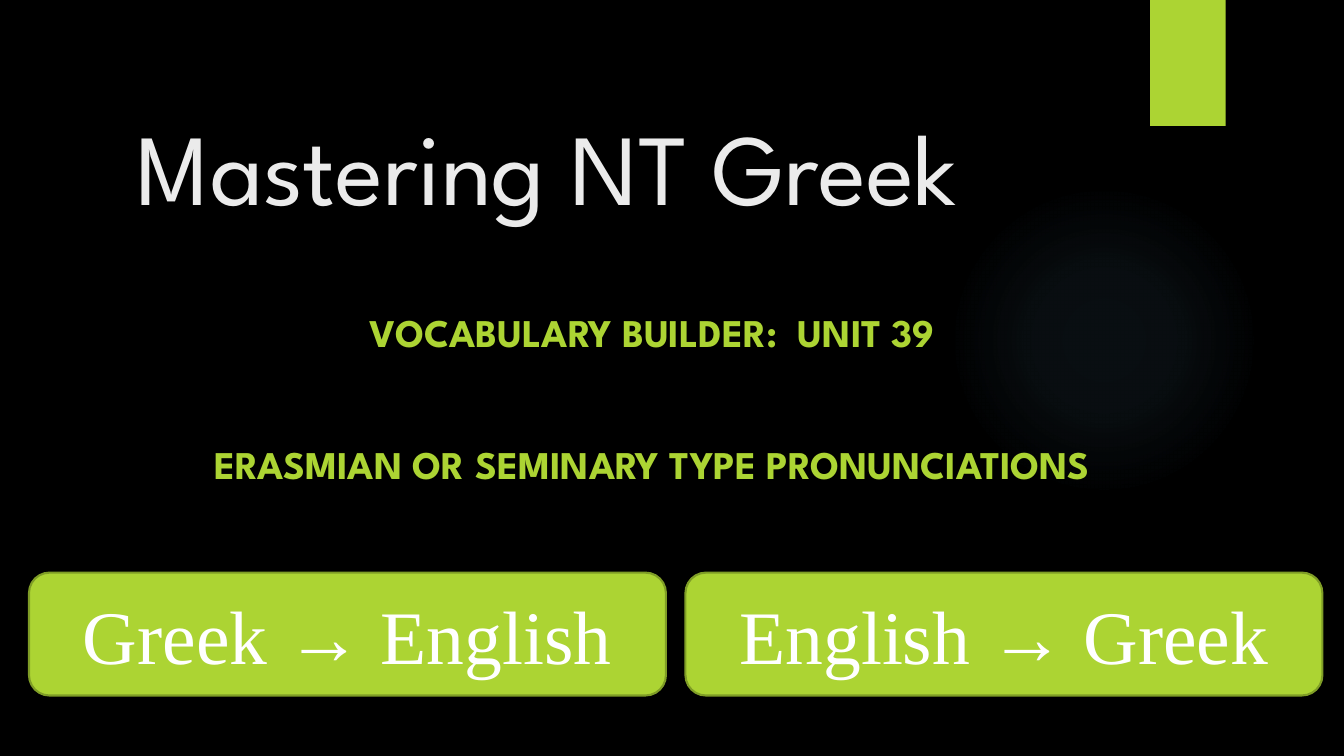
"""Build the opening slide of a Greek vocabulary unit."""
from lxml import etree
from pptx import Presentation
from pptx import util as u
from pptx.dml import color
from pptx.enum import shapes, text
from pptx.oxml import ns

LIME, OLIVE, PALE, WHITE, BLACK, SKY = (
    "ACD433", "7F9D26", "EBEBEB", "FFFFFF", "000000", "7AC4F0")


def rgb(value):
    return color.RGBColor.from_string(value)


class TitleSlide:
    heading = {"name": "League Spartan", "size": u.Pt(72), "bold": False}
    subheading = {"name": "League Spartan", "size": u.Pt(28), "bold": True}
    label = {"name": "Times New Roman", "size": u.Pt(54), "bold": False}

    def __init__(self, deck):
        self.slide = deck.slides.add_slide(deck.slide_layouts[6])
        self.slide.background.fill.solid()
        self.slide.background.fill.fore_color.rgb = rgb(BLACK)

    def fill_text(self, frame, lines, style, ink, align, anchor, gap=0):
        layout = {"word_wrap": True, "vertical_anchor": anchor}
        for key, value in layout.items():
            setattr(frame, key, value)
        for index, line in enumerate(lines):
            paragraph = frame.add_paragraph() if index else frame.paragraphs[0]
            paragraph.alignment = align
            if index:
                paragraph.space_before = u.Pt(gap)
            run = paragraph.add_run()
            run.text = line
            for key, value in style.items():
                setattr(run.font, key, value)
            run.font.color.rgb = rgb(ink)

    def words(self, box, lines, style, ink, align, anchor, gap=0, top=3.6):
        frame = self.slide.shapes.add_textbox(*map(u.Pt, box)).text_frame
        frame.margin_top = u.Pt(top)
        self.fill_text(frame, lines, style, ink, align, anchor, gap)

    def block(self, kind, box, fill, edge=None):
        block = self.slide.shapes.add_shape(kind, *map(u.Pt, box))
        block.shadow.inherit = False
        block.fill.solid()
        block.fill.fore_color.rgb = rgb(fill)
        if edge:
            block.line.color.rgb = rgb(edge)
            block.line.width = u.Pt(1.5)
        else:
            block.line.fill.background()
        return block

    def glow(self, box, tint, stops):
        halo = self.block(shapes.MSO_SHAPE.OVAL, box, tint)
        solid = halo.element.find(".//" + ns.qn("a:solidFill"))
        gradient = etree.Element(ns.qn("a:gradFill"), rotWithShape="1")
        stop_list = etree.SubElement(gradient, ns.qn("a:gsLst"))
        for position, opacity in stops:
            stop = etree.SubElement(stop_list, ns.qn("a:gs"), pos=str(position * 1000))
            hue = etree.SubElement(stop, ns.qn("a:srgbClr"), val=tint)
            etree.SubElement(hue, ns.qn("a:alpha"), val=str(opacity * 1000))
        spread = etree.SubElement(gradient, ns.qn("a:path"), path="circle")
        centre = dict.fromkeys("ltrb", "50000")
        etree.SubElement(spread, ns.qn("a:fillToRect"), **centre)
        solid.getparent().replace(solid, gradient)

    def button(self, box, caption):
        button = self.block(shapes.MSO_SHAPE.ROUNDED_RECTANGLE, box, LIME, OLIVE)
        self.fill_text(button.text_frame, [caption], self.label, WHITE,
                       text.PP_ALIGN.CENTER, text.MSO_ANCHOR.MIDDLE)


def main():
    deck = Presentation()
    deck.slide_width, deck.slide_height = u.Pt(960), u.Pt(540)
    opening = TitleSlide(deck)
    opening.glow((677.5, 131.8, 221.8, 221.8), SKY, [(0, 7), (36, 6), (69, 0)])
    opening.block(shapes.MSO_SHAPE.RECTANGLE, (821.5, 0, 54, 90), LIME)
    opening.words((90.7, 50.4, 722.9, 114.5), ["Mastering NT Greek"],
                  opening.heading, PALE, text.PP_ALIGN.LEFT, text.MSO_ANCHOR.BOTTOM)
    opening.words((56.2, 207.4, 819.4, 193.7),
                  ["VOCABULARY BUILDER:  UNIT 39",
                   "ERASMIAN OR SEMINARY TYPE PRONUNCIATIONS"],
                  opening.subheading, LIME, text.PP_ALIGN.CENTER,
                  text.MSO_ANCHOR.TOP, gap=61, top=12.5)
    for column, caption in enumerate(["Greek → English", "English → Greek"]):
        opening.button((20.7 + column * 468.9, 409, 455, 87.8), caption)
    deck.save("out.pptx")


if __name__ == "__main__":
    main()
